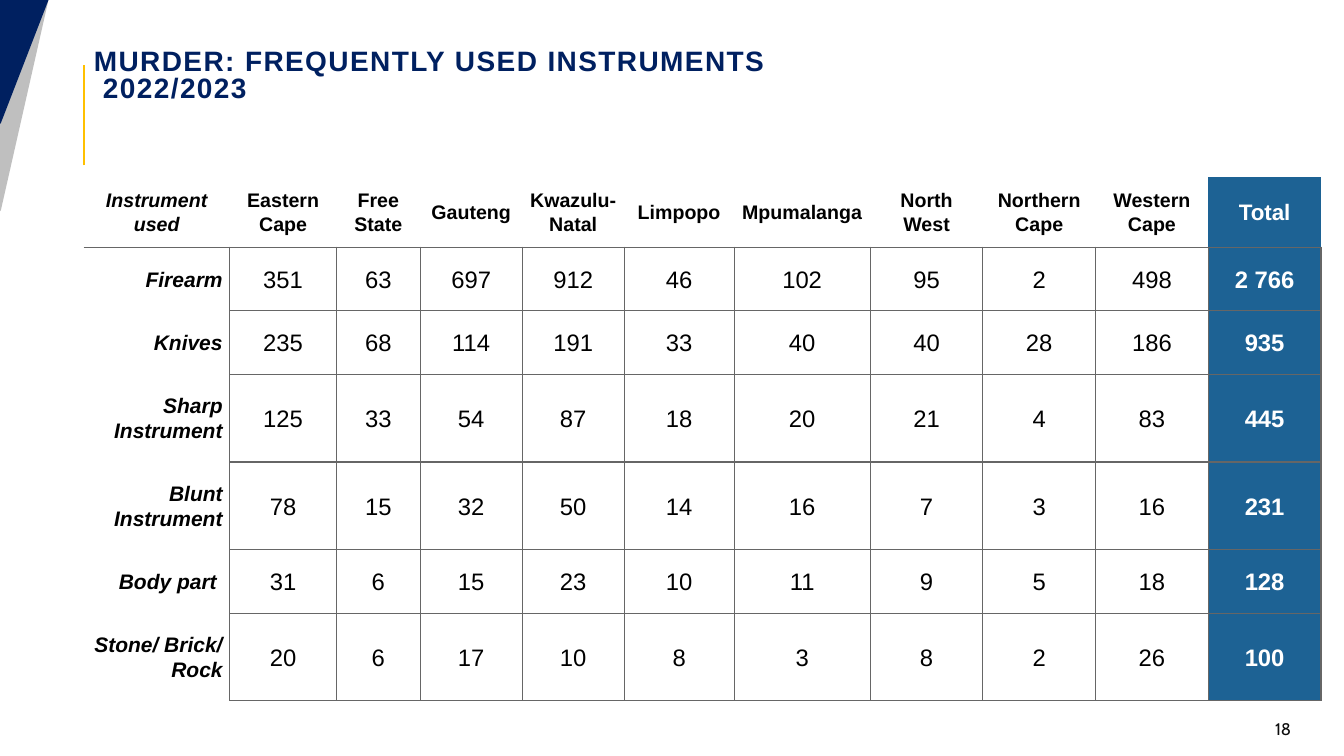
import pptx
import pptx.util
import pptx.dml.color
import pptx.enum.shapes
import pptx.enum.text
import pptx.oxml
import pptx.oxml.ns
from lxml import etree

Cm = pptx.util.Cm
Pt = pptx.util.Pt
RGBColor = pptx.dml.color.RGBColor
Align = pptx.enum.text.PP_ALIGN
Middle = pptx.enum.text.MSO_ANCHOR.MIDDLE
qn = pptx.oxml.ns.qn

NAVY = RGBColor(0x00, 0x20, 0x60)
SILVER = RGBColor(0xBF, 0xBF, 0xBF)
GOLD = RGBColor(0xFF, 0xC0, 0x00)
BLUE = RGBColor(0x1D, 0x62, 0x94)
GREY = RGBColor(0x66, 0x66, 0x66)
INK = RGBColor(0x0D, 0x0D, 0x0D)
BLACK = RGBColor(0, 0, 0)
WHITE = RGBColor(0xFF, 0xFF, 0xFF)

LEFT = 2.11
WIDTHS = [3.68, 2.69, 2.11, 2.57, 2.57, 2.77, 3.43] + [2.84] * 4
SHORT, TALL = 1.6, 2.21
HEIGHTS = [1.78, SHORT, SHORT, TALL, TALL, SHORT, TALL]
ROWS = [
    ["Instrument used", "Eastern Cape", "Free State", "Gauteng", "Kwazulu-Natal", "Limpopo",
     "Mpumalanga", "North West", "Northern Cape", "Western Cape", "Total"],
    ["Firearm", 351, 63, 697, 912, 46, 102, 95, 2, 498, "2 766"],
    ["Knives", 235, 68, 114, 191, 33, 40, 40, 28, 186, 935],
    ["Sharp Instrument", 125, 33, 54, 87, 18, 20, 21, 4, 83, 445],
    ["Blunt Instrument", 78, 15, 32, 50, 14, 16, 7, 3, 16, 231],
    ["Body part ", 31, 6, 15, 23, 10, 11, 9, 5, 18, 128],
    ["Stone/ Brick/ Rock", 20, 6, 17, 10, 8, 3, 8, 2, 26, 100],
]


class Page:
    def __init__(self, deck):
        self.slide = deck.slides.add_slide(deck.slide_layouts[5])
        self.shapes = self.slide.shapes
        self.face = "Arial"

    def style(self, para, size, color, align, bold=False, slant=False, face=None):
        para.alignment = align
        font = para.font
        font.name = face or self.face
        font.size = Pt(size)
        font.color.rgb = color
        font.bold = bold
        font.italic = slant

    def wedge(self, width, height, color):
        kind = pptx.enum.shapes.MSO_SHAPE.RIGHT_TRIANGLE
        shape = self.shapes.add_shape(kind, 0, 0, Cm(width), Cm(height))
        shape.shadow.inherit = False
        shape.fill.solid()
        shape.fill.fore_color.rgb = color
        shape.line.color.rgb = color
        shape.line.width = Pt(1.25)
        shape.element.spPr.find(qn("a:xfrm")).set("flipV", "1")

    def rule(self, x, top, foot, color):
        kind = pptx.enum.shapes.MSO_CONNECTOR.STRAIGHT
        line = self.shapes.add_connector(kind, Cm(x), Cm(foot), Cm(x), Cm(top))
        line.line.color.rgb = color
        line.line.width = Pt(1.5)
        etree.SubElement(line.element.spPr, qn("a:effectLst"))

    def place(self, shape, left, top, width, height):
        shape.left, shape.top = Cm(left), Cm(top)
        shape.width, shape.height = Cm(width), Cm(height)

    def title(self, text, *box):
        shape = self.shapes.title
        self.place(shape, *box)
        frame = shape.text_frame
        frame.text = text
        frame.word_wrap = True
        frame.auto_size = pptx.enum.text.MSO_AUTO_SIZE.NONE
        frame.vertical_anchor = Middle
        para = frame.paragraphs[0]
        para.line_spacing = 0.8
        self.style(para, 20, NAVY, Align.LEFT, bold=True)
        for run in para.runs:
            run.font.bold = True
            run.font.language_id = pptx.enum.lang.MSO_LANGUAGE_ID.ENGLISH_US
            run.font._element.set("spc", "100")

    def label(self, text, *box):
        shape = self.shapes.add_textbox(*[Cm(side) for side in box])
        frame = shape.text_frame
        frame.text = text
        frame.word_wrap = True
        frame.vertical_anchor = Middle
        self.style(frame.paragraphs[0], 12, INK, Align.RIGHT, face="Cabin")

    def edges(self, cell, sides):
        props = cell._tc.get_or_add_tcPr()
        for spot, side in enumerate("LRTB"):
            edge = etree.Element(qn("a:ln" + side), w=str(Pt(1)))
            if side in sides:
                fill = etree.SubElement(edge, qn("a:solidFill"))
                etree.SubElement(fill, qn("a:srgbClr"), val=str(GREY))
            else:
                etree.SubElement(edge, qn("a:noFill"))
            props.insert(spot, edge)

    def cell(self, cell, value, row, col):
        head, name, total = row == 0, col == 0, col == len(WIDTHS) - 1
        cell.text = str(value)
        cell.vertical_anchor = Middle
        cell.margin_left = cell.margin_right = Cm(0.18)
        cell.margin_top = cell.margin_bottom = 0
        cell.fill.solid()
        cell.fill.fore_color.rgb = BLUE if total else WHITE
        if head:
            size, sides = 16 if total else 14, "B"
        elif name:
            size, sides = 15, "RT" if row == 1 else "R"
        else:
            size, sides = 17, "LRTB"
        para = cell.text_frame.paragraphs[0]
        para.line_spacing = 1.07
        self.style(para, size, WHITE if total else BLACK,
                   Align.RIGHT if name and not head else Align.CENTER,
                   bold=head or name or total, slant=name)
        self.edges(cell, sides)

    def table(self, rows, left, top):
        grid = self.shapes.add_table(len(rows), len(WIDTHS), Cm(left), Cm(top),
                                     Cm(sum(WIDTHS)), Cm(sum(HEIGHTS))).table
        for column, width in zip(grid.columns, WIDTHS):
            column.width = Cm(width)
        for line, height in zip(grid.rows, HEIGHTS):
            line.height = Cm(height)
        for row, values in enumerate(rows):
            for col, value in enumerate(values):
                self.cell(grid.cell(row, col), value, row, col)


def main():
    deck = pptx.Presentation()
    deck.slide_width, deck.slide_height = Cm(33.87), Cm(19.05)
    page = Page(deck)
    page.rule(LEFT, 1.63, 4.17, GOLD)
    page.wedge(1.2, 5.3, SILVER)
    page.wedge(1.2, 3.1, NAVY)
    page.title("MURDER: FREQUENTLY USED INSTRUMENTS\v 2022/2023", LEFT, 0.64, 30.71, 2.62)
    page.label("18", 30.1, 17.98, 2.69, 0.76)
    page.table(ROWS, LEFT, 4.45)
    deck.save("out.pptx")


if __name__ == "__main__":
    main()
